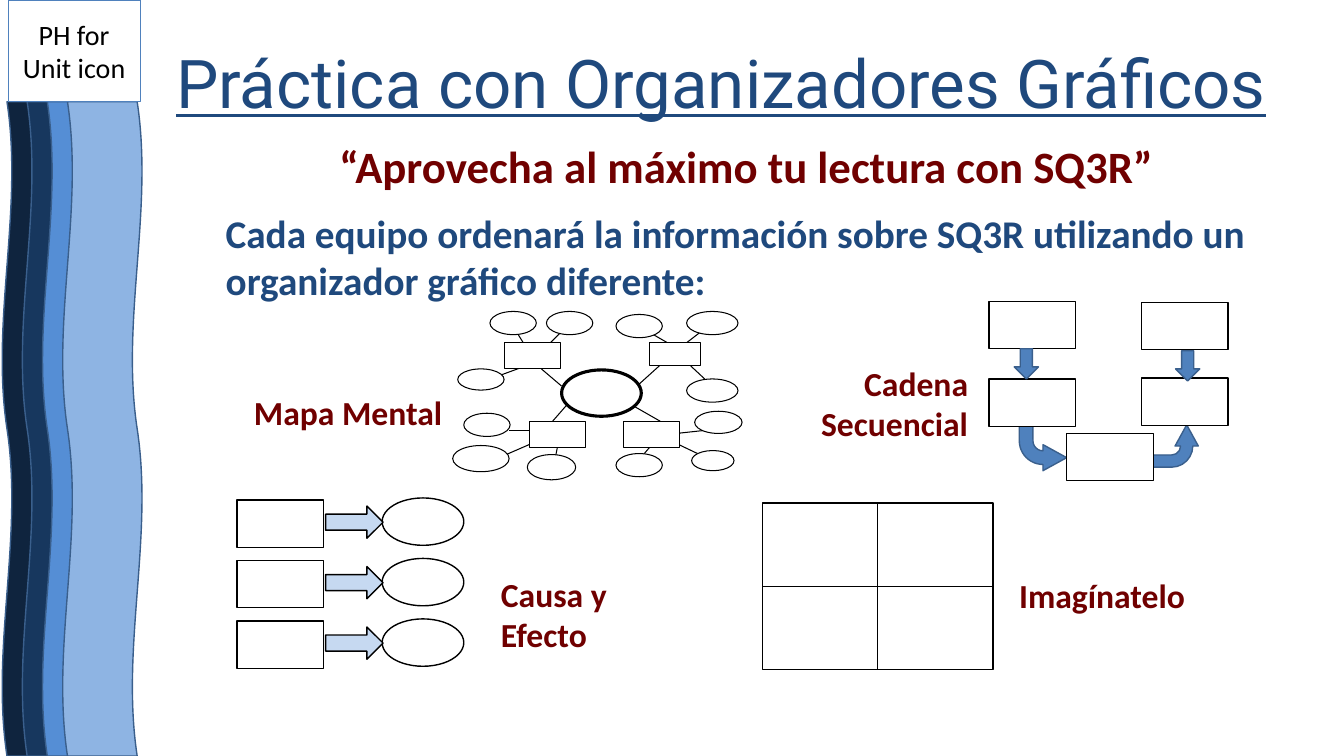
import dataclasses
import typing

import pptx
import pptx.dml.color
import pptx.enum.shapes
import pptx.enum.text
import pptx.oxml.ns
import pptx.util
from lxml import etree

RGB = pptx.dml.color.RGBColor
KIND = pptx.enum.shapes.MSO_SHAPE
ALIGN = pptx.enum.text.PP_ALIGN
ANCHOR = pptx.enum.text.MSO_ANCHOR
FIT = pptx.enum.text.MSO_AUTO_SIZE
Pt = pptx.util.Pt

WHITE = RGB(0xFF, 0xFF, 0xFF)
BLACK = RGB(0x00, 0x00, 0x00)
NAVY = RGB(0x1F, 0x49, 0x7D)
MAROON = RGB(0x70, 0x00, 0x00)
BLUE = RGB(0x4F, 0x81, 0xBD)
EDGE = RGB(0x3A, 0x5F, 0x8C)
PALE = RGB(0xC6, 0xD9, 0xF1)
WAVES = [RGB(0x0F, 0x24, 0x3E), RGB(0x17, 0x37, 0x5E),
         RGB(0x55, 0x8E, 0xD5), RGB(0x8E, 0xB4, 0xE3)]

CELL = pptx.util.Inches(0.1)  # side of one square of the layout grid


@dataclasses.dataclass(frozen=True)
class Box:
    """Place and size in grid columns and rows."""
    col: float
    row: float
    cols: float
    rows: float

    def emu(self) -> list[int]:
        return [grid(v) for v in (self.col, self.row, self.cols, self.rows)]


@dataclasses.dataclass(frozen=True)
class Look:
    kind: KIND
    fill: RGB = WHITE
    line: RGB = BLACK
    width: float = 1


@dataclasses.dataclass(frozen=True)
class Label:
    text: str
    box: Box
    align: ALIGN = ALIGN.LEFT


class Link(typing.NamedTuple):
    col1: float
    row1: float
    col2: float
    row2: float


TITLE = {"name": "Roboto", "size": Pt(48), "underline": True, "bold": False}
SUBTITLE = {"name": "Calibri", "size": Pt(32), "bold": True, "underline": False}
INTRO = {"name": "Calibri", "size": Pt(28), "bold": True}
CAPTION = {"name": "Calibri", "size": Pt(24), "bold": True}
ICON = {"name": "Calibri", "size": Pt(20)}
TEXT_BOX = {"word_wrap": True, "auto_size": FIT.SHAPE_TO_FIT_TEXT,
            "vertical_anchor": ANCHOR.TOP}

FRAME = Look(KIND.RECTANGLE)
EFFECT = Look(KIND.FLOWCHART_CONNECTOR)
CAUSE_ARROW = Look(KIND.RIGHT_ARROW, PALE)
DOWN = Look(KIND.DOWN_ARROW, BLUE, EDGE)
BEND = Look(KIND.BENT_ARROW, BLUE, EDGE)
TOPIC = Look(KIND.RECTANGLE, width=0.75)
IDEA = Look(KIND.OVAL, width=0.75)
CENTRE = Look(KIND.OVAL, width=2.25)

MAP_LINKS = [
    Link(54.6, 34, 55.6, 33), Link(66.2, 34, 64.8, 33.2), Link(68.1, 34, 69.4, 33),
    Link(51.6, 36.5, 49.7, 37.2), Link(52.8, 42.7, 50.5, 42.7),
    Link(52.5, 44.1, 50.2, 45.1), Link(55.1, 45.3, 55.3, 44.3),
    Link(62.7, 40.2, 65.5, 41.8), Link(69.9, 42.7, 67.1, 43),
    Link(67.3, 44.1, 69.2, 45), Link(64.5, 44.3, 63.9, 45),
    Link(56.2, 40.2, 54.8, 41.8), Link(63.4, 38.1, 65.5, 36.2),
    Link(55.7, 38.3, 53.7, 36.6), Link(51.9, 34, 51.4, 33.2),
    Link(68.5, 36.3, 69.9, 37.6),
]
MAP_TOPICS = [Box(50, 34, 5.6, 2.6), Box(64.4, 34, 5.1, 2.3),
              Box(52.5, 41.8, 5.6, 2.6), Box(61.8, 41.8, 5.6, 2.6)]
MAP_IDEAS = [
    Box(48.6, 30.9, 4.6, 2.3), Box(54.2, 30.9, 4.6, 2.3), Box(61.1, 31.2, 4.6, 2.3),
    Box(68.1, 30.9, 5.1, 2.3), Box(45.4, 36.6, 4.6, 2.1), Box(68.1, 37.6, 5.1, 2.3),
    Box(46, 41, 4.6, 2.3), Box(68.9, 40.8, 4.7, 2.2), Box(44.9, 44.2, 5.6, 2.6),
    Box(52.3, 45.1, 4.8, 2.5), Box(61.1, 45, 4.6, 2.3), Box(68.6, 44.7, 4.2, 2),
]
CHAIN_STEPS = [(98.1, 29.9), (98.1, 37.6), (105.8, 43), (113.2, 37.5), (113.2, 30)]
LABELS = [
    Label("Mapa Mental", Box(24.2, 38.4, 20.7, 5)),
    Label("Cadena Secuencial", Box(80.1, 35.5, 16.9, 9.1), ALIGN.RIGHT),
    Label("Imagínatelo", Box(100.1, 56.5, 19.6, 5)),
    Label("Causa y Efecto", Box(48.7, 56.4, 19.6, 9.1)),
]


def grid(cells: float) -> int:
    return round(cells * CELL)


def apply(target: object, values: dict) -> None:
    for name, value in values.items():
        setattr(target, name, value)


def write(p, text: str, font: dict, color: RGB, **paragraph) -> None:
    r = p.add_run()
    r.text = text
    apply(r.font, font)
    r.font.color.rgb = color
    apply(p, paragraph)


def draw(s, look: Look, box: Box, rotation: float = 0):
    sp = s.shapes.add_shape(look.kind, *box.emu())
    sp.shadow.inherit = False
    sp.rotation = rotation
    sp.fill.solid()
    sp.fill.fore_color.rgb = look.fill
    sp.line.color.rgb = look.line
    sp.line.width = Pt(look.width)
    return sp


def draw_link(s, link: Link, width: float) -> None:
    line = s.shapes.add_connector(pptx.enum.shapes.MSO_CONNECTOR.STRAIGHT,
                                  *map(grid, link))
    line.line.color.rgb = BLACK
    line.line.width = Pt(width)
    etree.SubElement(line._element.spPr, pptx.oxml.ns.qn("a:effectLst"))


def draw_bend(s, box: Box, rotation: float = 0) -> None:
    """Draw a bent arrow mirrored top to bottom."""
    sp = draw(s, BEND, box, rotation)
    for i, value in enumerate((0.288, 0.275, 0.5, 0.647)):
        sp.adjustments[i] = value
    sp._element.spPr.get_or_add_xfrm().set("flipV", "1")


def add_text(s, label: Label, font: dict, color: RGB, **paragraph) -> None:
    tf = s.shapes.add_textbox(*label.box.emu()).text_frame
    apply(tf, TEXT_BOX)
    write(tf.paragraphs[0], label.text, font, color, alignment=label.align, **paragraph)


def draw_side_band(s) -> None:
    for i, color in enumerate(WAVES):
        draw(s, Look(KIND.DOUBLE_WAVE, color, EDGE),
             Box(-28.3 + 2 * i, 38.6, 64.9, 7.9), 270)
    sp = draw(s, Look(KIND.RECTANGLE, WHITE, BLUE, 0.75), Box(0.8, 0, 13.1, 10.1))
    apply(sp.text_frame, {"word_wrap": True, "vertical_anchor": ANCHOR.MIDDLE})
    write(sp.text_frame.paragraphs[0], "PH for Unit icon", ICON, BLACK,
          alignment=ALIGN.CENTER)


def fill_title(s) -> None:
    sp = s.shapes.title
    apply(sp, dict(zip(("left", "top", "width", "height"),
                       Box(15, 3.6, 113.1, 16.2).emu())))
    tf = sp.text_frame
    apply(tf, TEXT_BOX)
    spacing = {"alignment": ALIGN.CENTER, "space_after": Pt(12)}
    write(tf.paragraphs[0], "Práctica con Organizadores Gráficos", TITLE, NAVY, **spacing)
    p = tf.add_paragraph()
    write(p, "“Aprovecha al máximo tu lectura con SQ3R”", SUBTITLE, MAROON, **spacing)
    apply_indent = p._p.get_or_add_pPr().set
    apply_indent("marL", str(grid(5)))
    apply_indent("indent", "0")


def draw_mind_map(s) -> None:
    for link in MAP_LINKS:
        draw_link(s, link, 0.75)
    draw(s, CENTRE, Box(55.7, 36.7, 7.9, 4.6))
    for look, boxes in ((TOPIC, MAP_TOPICS), (IDEA, MAP_IDEAS)):
        for box in boxes:
            draw(s, look, box)


def draw_cause_effect(s) -> None:
    for row in (49.6 + 6 * i for i in range(3)):
        draw(s, FRAME, Box(23.5, row, 8.6, 4.7))
        draw(s, EFFECT, Box(37.9, row - 0.2, 8.1, 4.7))
        draw(s, CAUSE_ARROW, Box(32.3, row + 0.6, 5.7, 3.2))


def draw_chain(s) -> None:
    draw_bend(s, Box(101.1, 42, 4.7, 4.7))
    draw_bend(s, Box(114.4, 41.9, 4.2, 4.7), 270)
    for col, row in CHAIN_STEPS:
        draw(s, FRAME, Box(col, row, 8.6, 4.7))
    for col, row in ((100.6, 34.6), (116.6, 34.8)):
        draw(s, DOWN, Box(col, row, 2.4, 3))


def draw_four_panes(s) -> None:
    box = Box(75.6, 49.9, 22.9, 16.5)
    draw(s, FRAME, box)
    mid_col, mid_row = box.col + box.cols / 2, box.row + box.rows / 2
    draw_link(s, Link(mid_col, box.row, mid_col, box.row + box.rows), 0.5)
    draw_link(s, Link(box.col, mid_row, box.col + box.cols, mid_row), 0.5)


def main() -> None:
    prs = pptx.Presentation()
    apply(prs, {"slide_width": pptx.util.Inches(13.33),
                "slide_height": pptx.util.Inches(7.5)})
    s = prs.slides.add_slide(prs.slide_layouts.get_by_name("Title Only"))
    draw_side_band(s)
    fill_title(s)
    add_text(s, Label("Cada equipo ordenará la información sobre SQ3R utilizando un "
                      "organizador gráfico diferente:", Box(21.4, 20.3, 113.1, 10.4)),
             INTRO, NAVY, space_after=Pt(18))
    for draw_organizer in (draw_mind_map, draw_cause_effect, draw_chain, draw_four_panes):
        draw_organizer(s)
    for label in LABELS:
        add_text(s, label, CAPTION, MAROON)
    prs.save("out.pptx")


if __name__ == "__main__":
    main()
